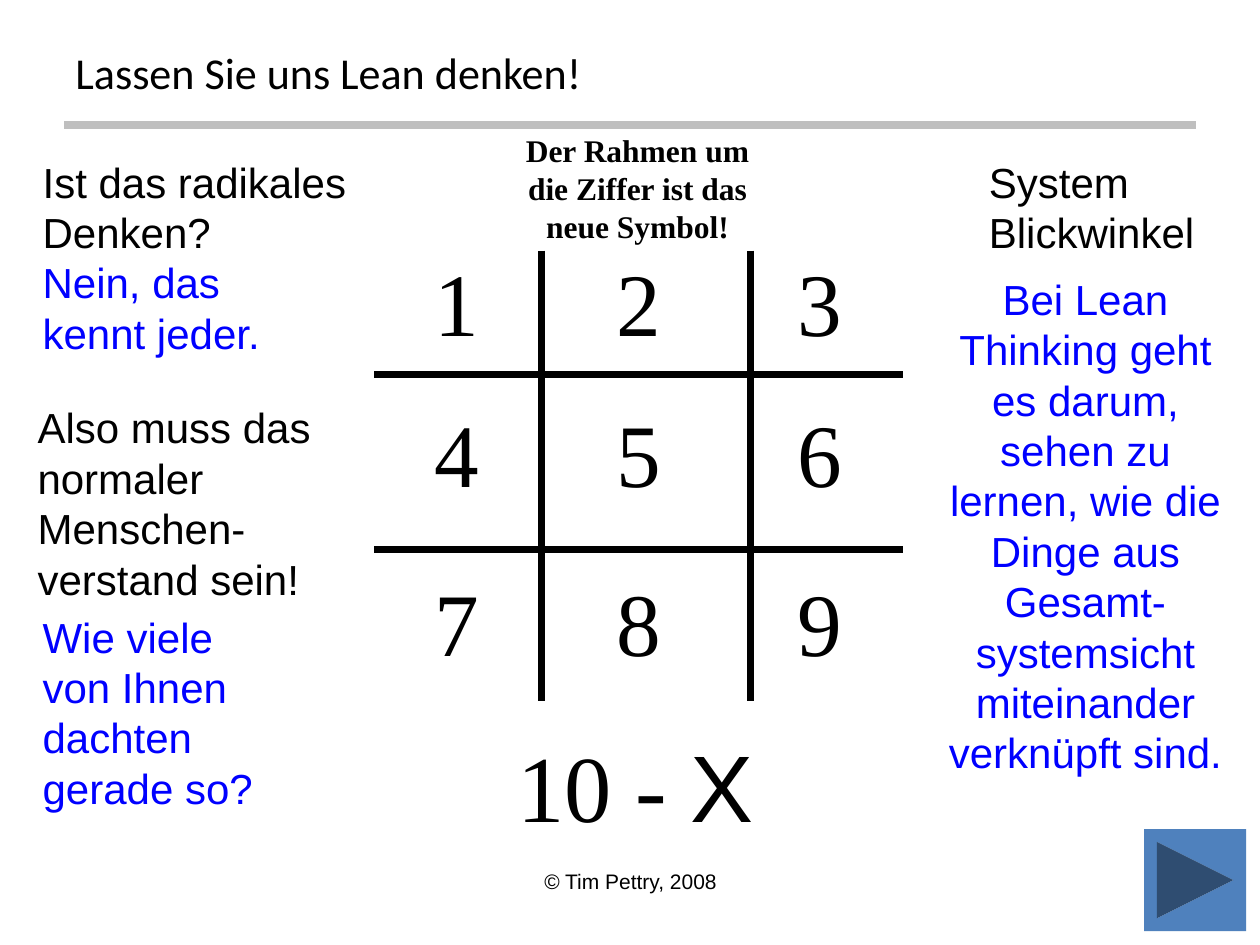
from lxml import etree
from pptx import Presentation
from pptx.dml.color import RGBColor
from pptx.enum.shapes import MSO_CONNECTOR, MSO_SHAPE
from pptx.enum.text import MSO_ANCHOR, PP_ALIGN
from pptx.oxml.ns import qn
from pptx.util import Inches, Pt

LEFT, CENTER = PP_ALIGN.LEFT, PP_ALIGN.CENTER
TOP, MIDDLE = MSO_ANCHOR.TOP, MSO_ANCHOR.MIDDLE
STRAIGHT = MSO_CONNECTOR.STRAIGHT
NEXT_BUTTON = MSO_SHAPE.ACTION_BUTTON_FORWARD_OR_NEXT
COLORS = {"text": "000000", "answer": "0000FF", "rule": "BFBFBF", "button": "4F81BD"}
SANS, SERIF, TITLE = "Arial", "Times New Roman", "Calibri"


def rgb(name):
    return RGBColor.from_string(COLORS[name])


def add_line(s, x1, y1, x2, y2, width, color="text"):
    line = s.shapes.add_connector(STRAIGHT, Inches(x1), Inches(y1), Inches(x2), Inches(y2))
    line.line.color.rgb = rgb(color)
    line.line.width = Pt(width)
    etree.SubElement(line._element.spPr, qn("a:effectLst"))


def add_text(s, x, y, w, h, text, size=24, font=SANS, color="text",
             align=LEFT, anchor=TOP, bold=False):
    sp = s.shapes.add_textbox(Inches(x), Inches(y), Inches(w), Inches(h))
    tf = sp.text_frame
    tf.word_wrap = True
    tf.vertical_anchor = anchor
    p = tf.paragraphs[0]
    p.alignment = align
    p.add_run().text = text
    p.font.size = Pt(size)
    p.font.name = font
    p.font.bold = bold
    p.font.color.rgb = rgb(color)
    return tf


def add_digit_row(s, y, digits):
    tf = add_text(s, 3.36, y, 3.42, 0.94, "\t\t".join(digits), 51, SERIF)
    tf.margin_left, tf.margin_right = Inches(0.09), 0
    tf.margin_top = tf.margin_bottom = Inches(0.04)
    pPr = tf.paragraphs[0]._p.get_or_add_pPr()
    tabs = etree.Element(qn("a:tabLst"))
    for i in range(1, 5):
        etree.SubElement(tabs, qn("a:tab"), pos=str(Inches(0.72 * i)), algn="l")
    pPr.insert_element_before(tabs, "a:defRPr", "a:extLst")


def add_grid(s):
    for x in (4.3, 5.96):
        add_line(s, x, 1.99, x, 5.56, 4)
    for y in (2.97, 4.36):
        add_line(s, 2.97, y, 7.17, y, 4)
    for y, digits in ((1.92, "123"), (3.12, "456"), (4.46, "789")):
        add_digit_row(s, y, digits)


def add_formula(s):
    tf = add_text(s, 4.01, 5.73, 2.07, 1, "10 - ", 54, SERIF)
    tf.margin_right = 0
    r = tf.paragraphs[0].add_run()
    r.text = "X"
    r.font.name = SANS


def add_button(s):
    sp = s.shapes.add_shape(NEXT_BUTTON, Inches(9.08), Inches(6.58), Inches(0.81), Inches(0.81))
    sp.shadow.inherit = False
    sp.fill.solid()
    sp.fill.fore_color.rgb = rgb("button")
    sp.line.fill.background()


def main():
    prs = Presentation()
    prs.slide_width, prs.slide_height = Inches(10), Inches(7.5)
    s = prs.slides.add_slide(prs.slide_layouts[6])

    add_line(s, 0.51, 0.99, 9.49, 0.99, 4.5, "rule")
    add_text(s, 3.42, 6.84, 3.17, 0.52, "© Tim Pettry, 2008", 12, align=CENTER)
    add_text(s, 0.5, 0.3, 7.18, 0.54, "Lassen Sie uns Lean denken!", 25.2, TITLE, anchor=MIDDLE)
    add_grid(s)
    add_formula(s)

    add_text(s, 0.24, 1.19, 2.73, 0.91, "Ist das radikales Denken?")
    add_text(s, 0.2, 3.14, 2.53, 1.72, "Also muss das normaler Menschen-verstand sein!")
    add_text(s, 7.75, 1.19, 2.05, 0.91, "System Blickwinkel")
    add_text(s, 0.24, 1.99, 2.3, 0.91, "Nein, das kennt jeder.", color="answer")
    add_text(s, 0.24, 4.8, 2.06, 1.72, "Wie viele von Ihnen dachten gerade so?", color="answer")
    add_text(s, 7.4, 2.12, 2.43, 4.54,
             "Bei Lean Thinking geht es darum, sehen zu lernen, wie die Dinge aus "
             "Gesamt-systemsicht miteinander verknüpft sind.", color="answer", align=CENTER)
    add_text(s, 3.93, 0.99, 2.26, 1.01, "Der Rahmen um die Ziffer ist das neue Symbol!",
             18, SERIF, align=CENTER, bold=True)
    add_button(s)
    prs.save("out.pptx")


if __name__ == "__main__":
    main()
